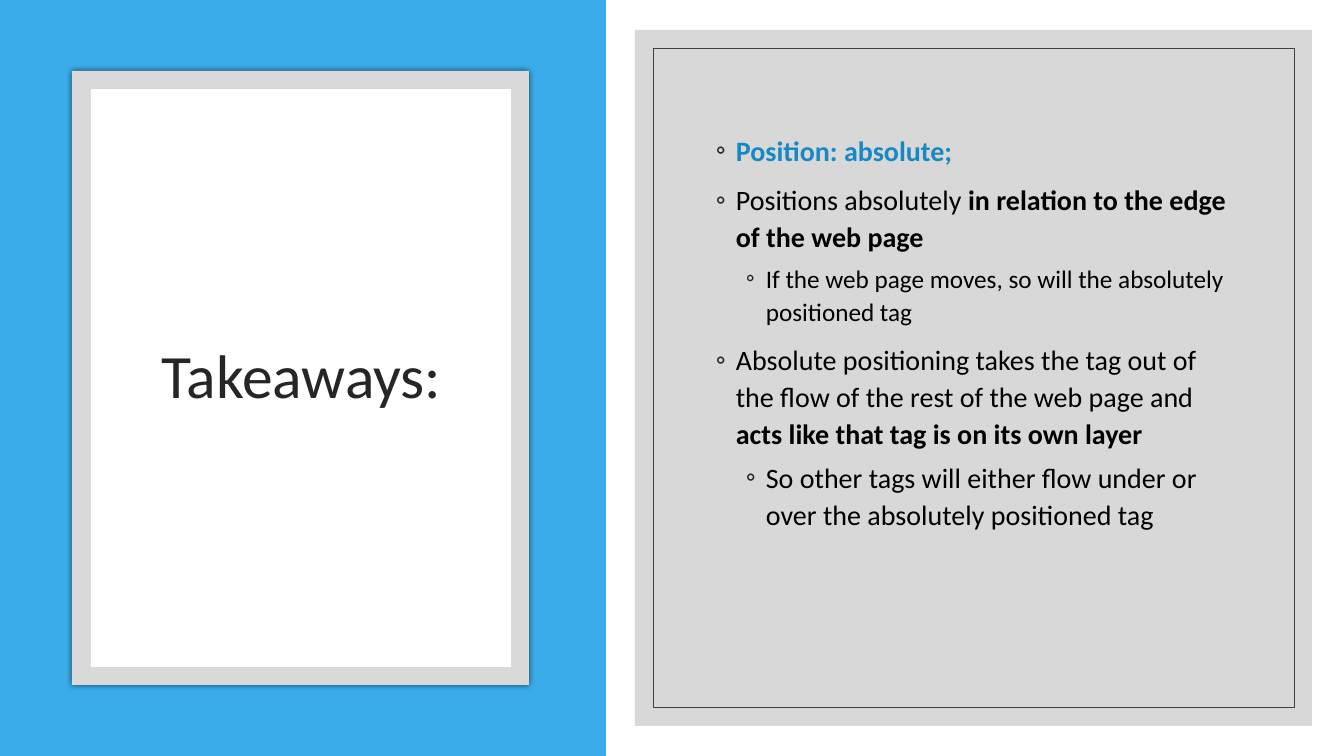
from lxml import etree
from pptx import Presentation
from pptx.dml.color import RGBColor
from pptx.enum.shapes import MSO_SHAPE
from pptx.enum.text import MSO_ANCHOR, MSO_AUTO_SIZE, PP_ALIGN
from pptx.oxml.ns import qn
from pptx.util import Pt

RECTANGLE = MSO_SHAPE.RECTANGLE
MIDDLE = MSO_ANCHOR.MIDDLE
NO_AUTOFIT = MSO_AUTO_SIZE.NONE
CENTER = PP_ALIGN.CENTER

EMU_PER_PX = 914400 / 100.8
WIDTH, HEIGHT = 1344, 756
TITLE_ONLY = 5
FONT = "Calibri"
COLORS = {
    "white": "FFFFFF",
    "blue": "3AACE9",
    "frame": "D9D9D9",
    "panel": "BFBFBF",
    "outline": "404040",
    "title": "262626",
    "accent": "1688C4",
    "text": "000000",
}

# Each point: level, size, spans of (words, color, bold)
POINTS = [
    (0, 20, [("Position: absolute;", "accent", True)]),
    (0, 20, [("Positions absolutely ", "text", False),
             ("in relation to the edge of the web page", "text", True)]),
    (1, 18, [("If the web page moves, so will the absolutely positioned tag",
              "text", False)]),
    (0, 20, [("Absolute positioning takes the tag out of the flow of the "
              "rest of the web page and ", "text", False),
             ("acts like that tag is on its own layer", "text", True)]),
    (1, 20, [("So other tags will either flow under or over the absolutely "
              "positioned tag", "text", False)]),
]
INDENTS = [20, 50]
HANGING = 20
SPACE_BEFORE = [9, 5]


def px(length):
    return round(length * EMU_PER_PX)


def rgb(name):
    return RGBColor.from_string(COLORS[name])


def add_node(parent, tag, **attributes):
    return etree.SubElement(parent, qn(tag), attributes)


def add_panel(page, left, top, width, height, fill=None, line=None):
    panel = page.shapes.add_shape(
        RECTANGLE, px(left), px(top), px(width), px(height))
    panel.shadow.inherit = False
    if fill:
        panel.fill.solid()
        panel.fill.fore_color.rgb = rgb(fill)
    else:
        panel.fill.background()
    if line:
        panel.line.color.rgb = rgb(line)
        panel.line.width = Pt(0.5)
    else:
        panel.line.fill.background()
    return panel


def add_glow_shadow(panel):
    effects = panel._element.spPr.find(qn("a:effectLst"))
    shadow = add_node(effects, "a:outerShdw", blurRad=str(Pt(4)),
                      dist="0", dir="0", algn="ctr", rotWithShape="0")
    color = add_node(shadow, "a:srgbClr", val=COLORS["text"])
    add_node(color, "a:alpha", val="66000")


def set_opacity(panel, percent):
    color = panel._element.spPr.find(qn("a:solidFill")).find(qn("a:srgbClr"))
    add_node(color, "a:alpha", val=str(percent * 1000))


def style_span(span, size, color, bold=False):
    span.font.name = FONT
    span.font.size = Pt(size)
    span.font.bold = bold
    span.font.color.rgb = rgb(color)


def prepare_frame(box):
    frame = box.text_frame
    frame.word_wrap = True
    frame.auto_size = NO_AUTOFIT
    frame.vertical_anchor = MIDDLE
    return frame


def place_title(page, left, top, width, height, words):
    title = page.shapes.title
    title.left, title.top = px(left), px(top)
    title.width, title.height = px(width), px(height)
    page.shapes._spTree.append(title._element)  # bring in front of the card
    frame = prepare_frame(title)
    frame.text = words
    para = frame.paragraphs[0]
    para.alignment = CENTER
    para.line_spacing = 0.9
    style_span(para.runs[0], 44, "title")


def add_bullet(para, level):
    properties = para._p.get_or_add_pPr()
    properties.set("marL", str(px(INDENTS[level])))
    properties.set("indent", str(-px(HANGING)))
    color = add_node(properties, "a:buClr")
    add_node(color, "a:srgbClr", val=COLORS["title"])
    add_node(properties, "a:buFont", typeface=FONT)
    add_node(properties, "a:buChar", char="◦")


def add_points(page, left, top, width, height, points):
    box = page.shapes.add_textbox(px(left), px(top), px(width), px(height))
    frame = prepare_frame(box)
    frame.margin_bottom = px(99)  # lifts the list above the panel's middle
    for number, (level, size, spans) in enumerate(points):
        para = frame.add_paragraph() if number else frame.paragraphs[0]
        para.level = level
        para.line_spacing = 1.1
        para.space_before = Pt(SPACE_BEFORE[level])
        add_bullet(para, level)
        for words, color, bold in spans:
            span = para.add_run()
            span.text = words
            style_span(span, size, color, bold)


def main():
    deck = Presentation()
    deck.slide_width, deck.slide_height = px(WIDTH), px(HEIGHT)
    page = deck.slides.add_slide(deck.slide_layouts[TITLE_ONLY])

    # Background and blue left side
    add_panel(page, 0, 0, WIDTH, HEIGHT, "white")
    add_panel(page, 0, 0, 606, HEIGHT, "blue")

    # Title card
    card = add_panel(page, 72, 71, 457, 614, "frame")
    add_glow_shadow(card)
    add_panel(page, 91, 89, 420, 578, "white")
    place_title(page, 109, 131, 385, 495, "Takeaways:")

    # Points panel
    panel = add_panel(page, 635, 30, 677, 696, "panel")
    set_opacity(panel, 60)
    add_panel(page, 653, 48, 641, 659, line="outline")
    add_points(page, 706, 103, 537, 549, POINTS)

    deck.save("out.pptx")


if __name__ == "__main__":
    main()
